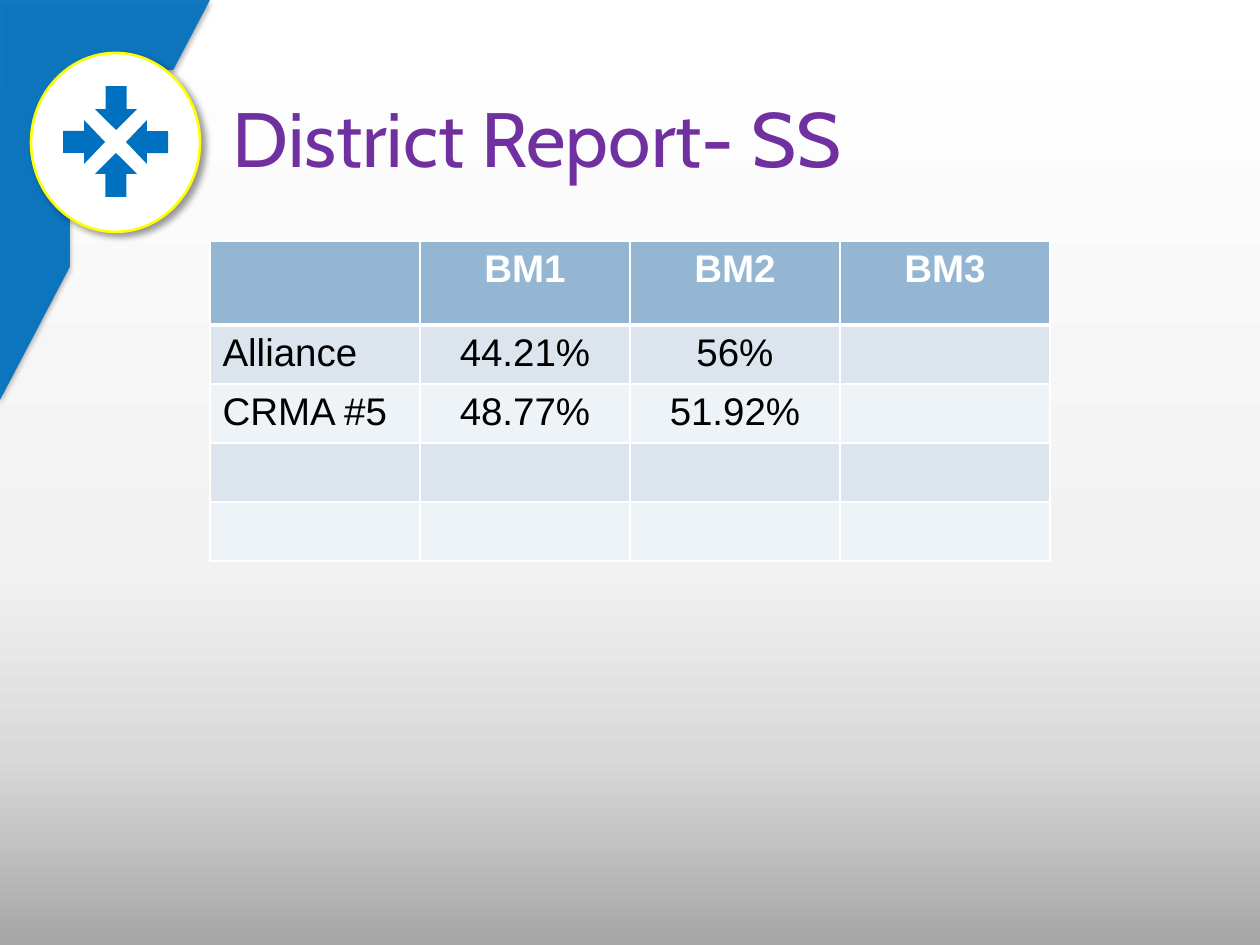
from dataclasses import dataclass

from lxml import etree
from pptx import Presentation
from pptx import util as u
from pptx.dml.color import RGBColor
from pptx.enum import shapes, text
from pptx.oxml.ns import qn

EMU_PER_PX = 914400 // 126
BLUE, WHITE, YELLOW, PURPLE, BLACK = "0070C0", "FFFFFF", "FFFF00", "7030A0", "000000"
HEADER_FILL, BAND_FILLS = "94B6D2", ("DCE5EE", "EEF3F7")
BACKGROUND_STOPS = ((0, "FFFFFF"), (60, "F2F2F2"), (80, "D9D9D9"), (100, "A6A6A6"))
COLUMN_WIDTH, HEADER_HEIGHT, ROW_HEIGHT = 210, 84, 59
ROWS = (
    ("", "BM1", "BM2", "BM3"),
    ("Alliance", "44.21%", "56%", ""),
    ("CRMA #5", "48.77%", "51.92%", ""),
    ("", "", "", ""),
    ("", "", "", ""),
)


@dataclass(frozen=True)
class Box:
    left: int
    top: int
    width: int
    height: int

    def emu(self) -> tuple:
        return tuple(px(v) for v in (self.left, self.top, self.width, self.height))


@dataclass(frozen=True)
class Arrow:
    box: Box
    rotation: int


@dataclass(frozen=True)
class Shadow:
    opacity: int
    blur: int
    distance: int
    angle: int


ARROWS = (
    Arrow(Box(95, 153, 42, 44), 0),
    Arrow(Box(62, 121, 44, 42), 90),
    Arrow(Box(95, 86, 42, 44), 180),
    Arrow(Box(125, 121, 44, 42), 270),
)


def px(value: int) -> int:
    return u.Emu(value * EMU_PER_PX)


def color(value: str) -> RGBColor:
    return RGBColor.from_string(value)


def add_color(parent, value: str, opacity: int = 100):
    element = etree.SubElement(parent, qn("a:srgbClr"), val=value)
    if opacity < 100:
        etree.SubElement(element, qn("a:alpha"), val=str(opacity * 1000))


def add_filled(container, kind, box: Box, fill: str):
    shape = container.add_shape(kind, *box.emu())
    shape.shadow.inherit = False
    shape.fill.solid()
    shape.fill.fore_color.rgb = color(fill)
    shape.line.fill.background()
    return shape


def add_shadow(shape, shadow: Shadow):
    effects = shape._element.spPr.find(qn("a:effectLst"))
    outer = etree.SubElement(
        effects, qn("a:outerShdw"), blurRad=str(u.Pt(shadow.blur)),
        dist=str(u.Pt(shadow.distance)), dir=str(shadow.angle * 60000), rotWithShape="0")
    add_color(outer, BLACK, shadow.opacity)


def paint_background(slide):
    fill = slide.background.fill
    fill.gradient()
    fill.gradient_angle = 270
    stops = next(slide._element.iter(qn("a:gsLst")))
    for stop in list(stops):
        stops.remove(stop)
    for position, value in BACKGROUND_STOPS:
        add_color(etree.SubElement(stops, qn("a:gs"), pos=str(position * 1000)), value)


def add_corner(slide):
    corner = add_filled(slide.shapes, shapes.MSO_SHAPE.HALF_FRAME, Box(0, 0, 210, 400), BLUE)
    solid = corner._element.spPr.find(qn("a:solidFill"))
    etree.SubElement(solid[0], qn("a:alpha"), val="92000")
    add_shadow(corner, Shadow(35, 3, 2, 90))


def add_badge(slide):
    group = slide.shapes.add_group_shape()
    disc = add_filled(group.shapes, shapes.MSO_SHAPE.OVAL, Box(31, 53, 169, 179), WHITE)
    disc.line.color.rgb = color(YELLOW)
    disc.line.width = u.Pt(1.5)
    add_shadow(disc, Shadow(40, 4, 3, 45))
    for arrow in ARROWS:
        shape = add_filled(group.shapes, shapes.MSO_SHAPE.UP_ARROW, arrow.box, BLUE)
        shape.rotation = arrow.rotation


def add_run(paragraph, content: str, size: int, font: str, value: str, bold: bool = False):
    run = paragraph.add_run()
    run.text = content
    run.font.size = u.Pt(size)
    run.font.name = font
    run.font.bold = bold
    run.font.color.rgb = color(value)


def write_title(slide):
    title = slide.shapes.title
    title.left, title.top, title.width, title.height = Box(220, 73, 987, 116).emu()
    frame = title.text_frame
    frame.vertical_anchor = text.MSO_ANCHOR.BOTTOM
    frame.auto_size = text.MSO_AUTO_SIZE.NONE
    paragraph = frame.paragraphs[0]
    paragraph.alignment = text.PP_ALIGN.LEFT
    add_run(paragraph, "District Report- SS", 44, "Cabin", PURPLE)


def set_borders(cell, top: int, bottom: int):
    """Draw white cell borders, with top and bottom widths in points."""
    properties = cell._tc.get_or_add_tcPr()
    for side, width in (("L", 1), ("R", 1), ("T", top), ("B", bottom)):
        line = etree.SubElement(properties, qn(f"a:ln{side}"), w=str(u.Pt(width)))
        add_color(etree.SubElement(line, qn("a:solidFill")), WHITE)


def add_scores(slide):
    columns = len(ROWS[0])
    height = HEADER_HEIGHT + ROW_HEIGHT * (len(ROWS) - 1)
    box = Box(210, 241, COLUMN_WIDTH * columns, height)
    table = slide.shapes.add_table(len(ROWS), columns, *box.emu()).table
    for column in table.columns:
        column.width = px(COLUMN_WIDTH)
    for r, values in enumerate(ROWS):
        header = r == 0
        table.rows[r].height = px(HEADER_HEIGHT if header else ROW_HEIGHT)
        for c, value in enumerate(values):
            cell = table.cell(r, c)
            set_borders(cell, top=3 if r == 1 else 1, bottom=3 if header else 1)
            cell.fill.solid()
            cell.fill.fore_color.rgb = color(HEADER_FILL if header else BAND_FILLS[(r - 1) % 2])
            if value:
                paragraph = cell.text_frame.paragraphs[0]
                paragraph.alignment = text.PP_ALIGN.CENTER if c else text.PP_ALIGN.LEFT
                add_run(paragraph, value, 22, "Arial", WHITE if header else BLACK, header)


def main():
    presentation = Presentation()
    presentation.slide_width, presentation.slide_height = u.Inches(10), u.Inches(7.5)
    slide = presentation.slides.add_slide(presentation.slide_layouts[5])
    paint_background(slide)
    add_corner(slide)
    add_badge(slide)
    write_title(slide)
    add_scores(slide)
    presentation.save("out.pptx")


if __name__ == "__main__":
    main()
